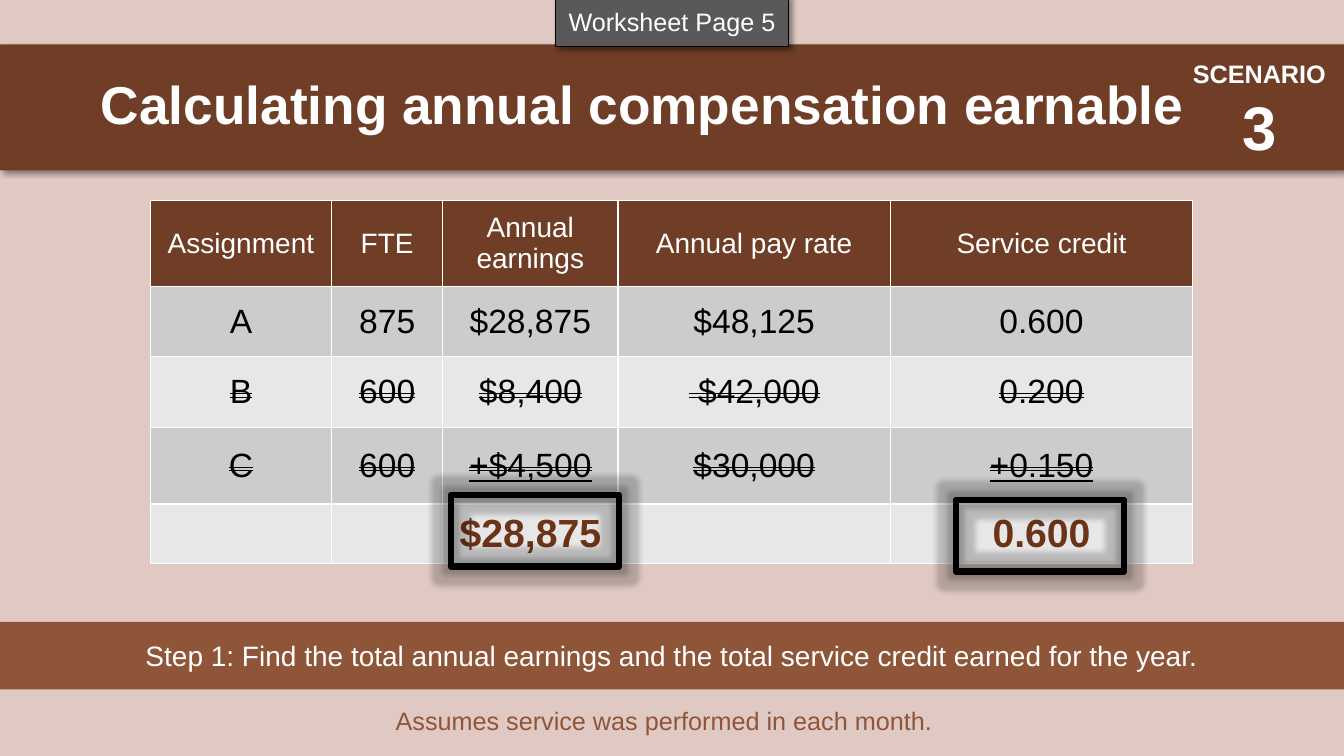
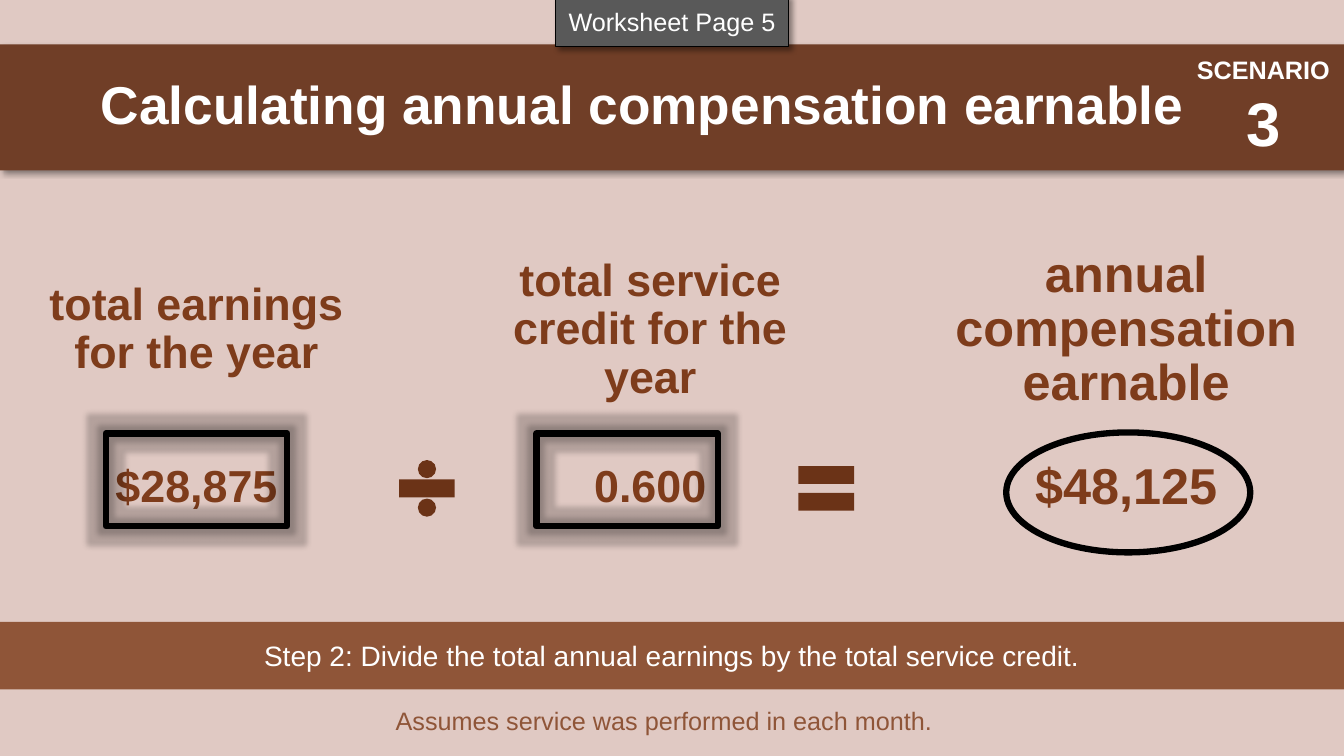
"""Build two slides that work out annual compensation earnable."""
from pptx import Presentation
from pptx.dml.color import RGBColor
from pptx.enum import shapes, text
from pptx.oxml import parse_xml
from pptx.oxml.ns import nsdecls, qn
from pptx.util import Inches, Pt

rgb = RGBColor.from_string
BACK, BAND, STRIP = "E0C9C3", "703E27", "8F5538"
DARK, RUST, TAB = "6B3317", "7E3C1B", "595959"
WHITE, BLACK, GREY, PALE = "FFFFFF", "000000", "CCCCCC", "E7E7E7"
SHADOW = ('<a:outerShdw %s blurRad="50800" dist="38100" dir="2700000">'
          '<a:srgbClr val="000000"><a:alpha val="40000"/></a:srgbClr></a:outerShdw>')
GLOW = ('<a:glow %s rad="101600"><a:srgbClr val="000000">'
        '<a:alpha val="20000"/></a:srgbClr></a:glow>')
MSO = shapes.MSO_SHAPE


def write(tf, lines, color, spacing=1.0, align=text.PP_ALIGN.CENTER, **fmt):
    """Write (text, size) lines, one paragraph each, with a shared format."""
    tf.word_wrap = True
    for i, (line, size) in enumerate(lines):
        p = tf.add_paragraph() if i else tf.paragraphs[0]
        p.alignment, p.line_spacing = align, spacing
        r = p.add_run()
        r.text = line
        for key, value in dict(name="Arial", size=Pt(size), **fmt).items():
            setattr(r.font, key, value)
        r.font.color.rgb = rgb(color)


def put(s, kind, at, fill=None, line=None, width=1, effect=None):
    """Add a preset shape, or a text box when kind is None."""
    at = [Inches(v) for v in at]
    if kind is None:
        return s.shapes.add_textbox(*at)
    sp = s.shapes.add_shape(kind, *at)
    sp.shadow.inherit = False
    sp.text_frame.vertical_anchor = text.MSO_ANCHOR.MIDDLE
    if fill:
        sp.fill.solid()
        sp.fill.fore_color.rgb = rgb(fill)
    else:
        sp.fill.background()
    if line:
        sp.line.color.rgb = rgb(line)
        sp.line.width = Pt(width)
    else:
        sp.line.fill.background()
    if effect:
        sp._element.spPr.find(qn("a:effectLst")).append(parse_xml(effect % nsdecls("a")))
    return sp


prs = Presentation()
prs.slide_width, prs.slide_height = Inches(13.33), Inches(7.5)
back = prs.slide_master.background.fill
back.solid()
back.fore_color.rgb = rgb(BACK)

steps = [
    ("Step 1: Find the total annual earnings and the total service credit earned for the year.",
     11.65, 0.53),
    ("Step 2: Divide the total annual earnings by the total service credit.", 11.69, 0.49),
]
for step, left, top in steps:
    s = prs.slides.add_slide(prs.slide_layouts[5])
    title = s.shapes.title
    title.left, title.top = 0, Inches(0.44)
    title.width, title.height = prs.slide_width, Inches(1.25)
    title.fill.solid()
    title.fill.fore_color.rgb = rgb(BAND)
    title.shadow.inherit = False
    title._element.spPr.find(qn("a:effectLst")).append(parse_xml(SHADOW % nsdecls("a")))
    tf = title.text_frame
    tf.margin_left = Inches(1)
    tf.auto_size = text.MSO_AUTO_SIZE.NONE
    tf.vertical_anchor = text.MSO_ANCHOR.MIDDLE
    write(tf, [("Calculating annual compensation earnable", 38)], WHITE, 0.9,
          text.PP_ALIGN.LEFT, bold=True)

    sp = put(s, MSO.RECTANGLE, (0, 6.17, 13.33, 0.67), STRIP)
    write(sp.text_frame, [(step, 20)], WHITE)
    sp = put(s, None, (3.22, 6.98, 6.73, 0.37))
    write(sp.text_frame, [("Assumes service was performed in each month.", 18)], STRIP, 0.9)
    sp = put(s, None, (left, top, 1.68, 1.14))
    write(sp.text_frame, [("SCENARIO", 18), ("3", 44)], WHITE, bold=True)
    sp = put(s, MSO.RECTANGLE, (5.51, -0.04, 2.31, 0.5), TAB, BLACK, effect=SHADOW)
    write(sp.text_frame, [("Worksheet Page 5", 18)], WHITE)

earnings, division = prs.slides

rows = [
    ("Assignment", "FTE", "Annual earnings", "Annual pay rate", "Service credit"),
    ("A", "875", "$28,875", "$48,125", "0.600"),
    ("B", "600", "$8,400", " $42,000", "0.200"),
    ("C", "600", "+$4,500", "$30,000", "+0.150"),
    ("", "", "$28,875", "", "0.600"),
]
styles = [
    (0.85, BAND, WHITE, 20, {"bold": False}),
    (0.7, GREY, BLACK, 24, {}),
    (0.7, PALE, BLACK, 24, {}),
    (0.76, GREY, BLACK, 24, {}),
    (0.59, PALE, DARK, 28, {"bold": True}),
]
at = [Inches(v) for v in (1.49, 1.99, 10.34, 3.6)]
table = earnings.shapes.add_table(len(rows), len(rows[0]), *at).table
table.first_row = table.horz_banding = False
for column, width in zip(table.columns, (1.8, 1.1, 1.74, 2.7, 3)):
    column.width = Inches(width)
for i, (values, (height, fill, color, size, fmt)) in enumerate(zip(rows, styles)):
    table.rows[i].height = Inches(height)
    for j, value in enumerate(values):
        cell = table.cell(i, j)
        cell.vertical_anchor = text.MSO_ANCHOR.MIDDLE
        tcPr = cell._tc.get_or_add_tcPr()
        for side in ("lnL", "lnR", "lnT", "lnB"):
            tcPr.append(parse_xml(
                f'<a:{side} {nsdecls("a")} w="12700"><a:solidFill>'
                f'<a:srgbClr val="{WHITE}"/></a:solidFill></a:{side}>'))
        cell.fill.solid()
        cell.fill.fore_color.rgb = rgb(fill)
        if value:
            underline = value.startswith("+")
            write(cell.text_frame, [(value, size)], color, underline=underline, **fmt)
            if values[0] in ("B", "C"):
                r = cell.text_frame.paragraphs[0].runs[0]
                r._r.get_or_add_rPr().set("strike", "dblStrike")

for left, top in ((4.47, 4.91), (9.48, 4.96)):
    put(earnings, MSO.RECTANGLE, (left, top, 1.67, 0.71), None, BLACK, 4.5, GLOW)

terms = [
    ("total earnings for the year", "$28,875", 32, 0.27, 3.36),
    ("total service credit for the year", "0.600", 32, 4.55, 3.8),
    ("annual compensation earnable", "$48,125", 36, 9.27, 3.8),
]
for label, value, size, left, width in terms:
    for line, top in ((label, 2.6), (value, 4.17)):
        tf = put(division, None, (left, top, width, 1.35)).text_frame
        tf.vertical_anchor = text.MSO_ANCHOR.MIDDLE
        tf.margin_left = tf.margin_right = Inches(0.14)
        write(tf, [(line, size)], RUST, 0.9, bold=True)

sp = put(division, MSO.MATH_DIVIDE, (3.86, 4.47, 0.75, 0.75), DARK)
for i, value in enumerate((0.24, 0.03, 0.12)):
    sp.adjustments[i] = value
put(division, MSO.MATH_EQUAL, (7.82, 4.47, 0.75, 0.75), DARK)
for left in (1.05, 5.32):
    put(division, MSO.RECTANGLE, (left, 4.3, 1.8, 0.92), None, BLACK, 4.5, GLOW)
put(division, MSO.OVAL, (9.98, 4.29, 2.42, 1.19), None, BLACK, 4.5)

prs.save("out.pptx")
